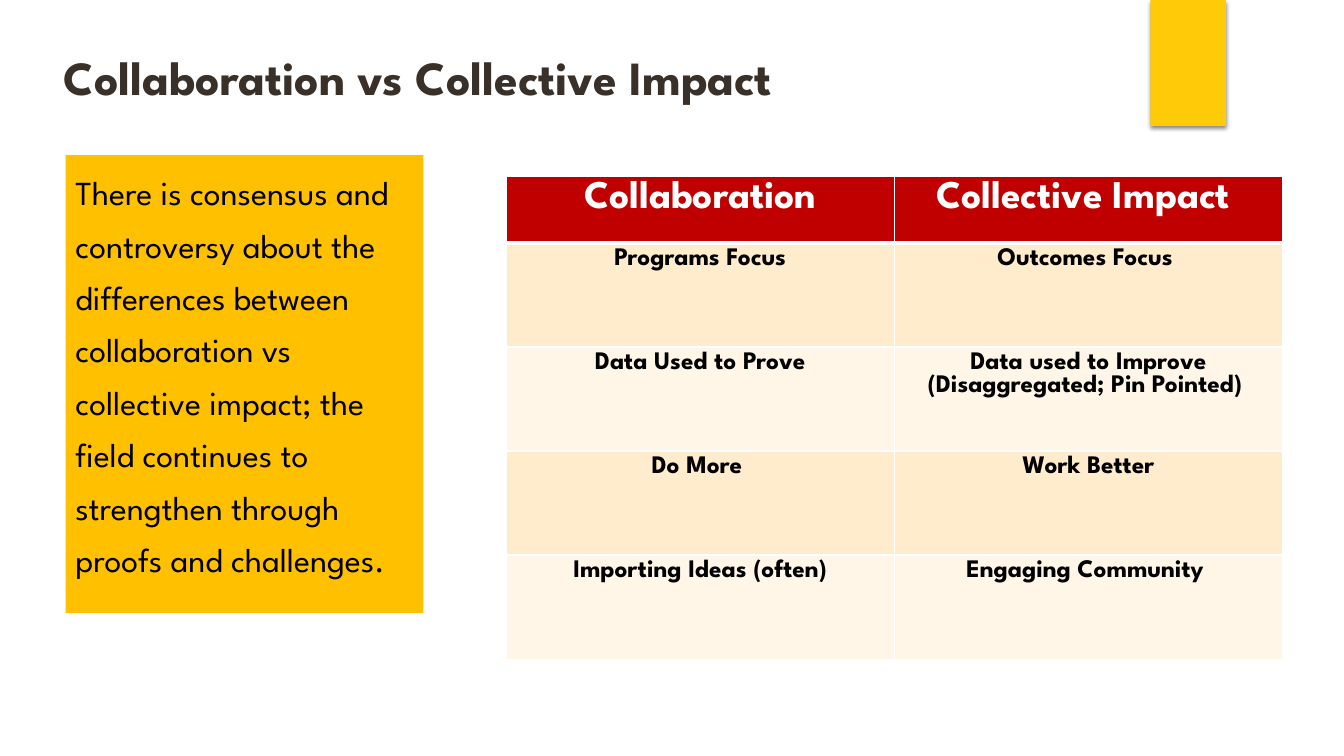
import pptx
import pptx.dml.color
import pptx.enum.shapes
import pptx.enum.text
import pptx.oxml
import pptx.oxml.ns
import pptx.util

FONT = "League Spartan"
WIDTH, HEIGHT = 13.33, 7.5
HEADINGS = ("Collaboration", "Collective Impact ")
CONTRASTS = [
    ("Programs Focus", "Outcomes Focus "),
    ("Data Used to Prove", "Data used to Improve (Disaggregated; Pin Pointed) "),
    ("Do More ", "Work Better"),
    ("Importing Ideas (often)", "Engaging Community "),
]
CONSENSUS = ("There is consensus and controversy about the differences between "
             "collaboration vs collective impact; the field continues to "
             "strengthen through proofs and challenges.")


def color(hex_string):
    return pptx.dml.color.RGBColor.from_string(hex_string)


def inches(box):
    return [pptx.util.Inches(length) for length in box]


def style(paragraph, size, hex_string, bold=False):
    font = paragraph.font
    font.name, font.size, font.bold = FONT, pptx.util.Pt(size), bold
    font.color.rgb = color(hex_string)


def add_block(slide, box, fill):
    block = slide.shapes.add_shape(
        pptx.enum.shapes.MSO_SHAPE.RECTANGLE, *inches(box))
    block.fill.solid()
    block.fill.fore_color.rgb = color(fill)
    block.line.fill.background()
    block.shadow.inherit = False
    return block


def add_tab(slide, box):
    tab = add_block(slide, box, "FFCA08")
    # Soft shadow straight below the tab
    effects = tab._element.spPr.find(pptx.oxml.ns.qn("a:effectLst"))
    effects.append(pptx.oxml.parse_xml(
        f'<a:outerShdw {pptx.oxml.ns.nsdecls("a")} blurRad="38100" dist="25400" '
        'dir="5400000" rotWithShape="0"><a:srgbClr val="000000">'
        '<a:alpha val="45000"/></a:srgbClr></a:outerShdw>'))


def add_title(slide, box):
    title = slide.shapes.title
    title.left, title.top, title.width, title.height = inches(box)
    frame = title.text_frame
    frame.text = "Collaboration vs Collective Impact"
    frame.vertical_anchor = pptx.enum.text.MSO_ANCHOR.MIDDLE
    heading = frame.paragraphs[0]
    heading.alignment = pptx.enum.text.PP_ALIGN.LEFT
    heading.line_spacing = 1.4
    style(heading, 34, "39302A", bold=True)


def add_consensus(slide, box):
    frame = add_block(slide, box, "FFC000").text_frame
    frame.word_wrap = True
    frame.vertical_anchor = pptx.enum.text.MSO_ANCHOR.TOP
    frame.text = CONSENSUS
    statement = frame.paragraphs[0]
    statement.alignment = pptx.enum.text.PP_ALIGN.LEFT
    statement.line_spacing = 1.3
    style(statement, 24, "000000")


def add_borders(cell, top, bottom):
    properties = cell._tc.get_or_add_tcPr()
    for side, points in (("L", 1), ("R", 1), ("T", top), ("B", bottom)):
        properties.append(pptx.oxml.parse_xml(
            f'<a:ln{side} {pptx.oxml.ns.nsdecls("a")} w="{pptx.util.Pt(points)}">'
            f'<a:solidFill><a:srgbClr val="FFFFFF"/></a:solidFill></a:ln{side}>'))


def add_comparison(slide, box, header_height):
    rows = [HEADINGS, *CONTRASTS]
    table = slide.shapes.add_table(len(rows), len(HEADINGS), *inches(box)).table
    row_height = (box[3] - header_height) / len(CONTRASTS)
    for r, texts in enumerate(rows):
        header = r == 0
        table.rows[r].height = pptx.util.Inches(header_height if header else row_height)
        fill = "C00000" if header else ("FFF6E7", "FFECCC")[r % 2]
        for c, text in enumerate(texts):
            cell = table.cell(r, c)
            # Heavier rule between the header and the first row
            add_borders(cell, top=3 if r == 1 else 1, bottom=3 if header else 1)
            cell.fill.solid()
            cell.fill.fore_color.rgb = color(fill)
            cell.text = text
            label = cell.text_frame.paragraphs[0]
            label.alignment = pptx.enum.text.PP_ALIGN.CENTER
            style(label, 28 if header else 18, "FFFFFF" if header else "000000", bold=True)


def main():
    deck = pptx.Presentation()
    deck.slide_width, deck.slide_height = inches((WIDTH, HEIGHT))
    slide = deck.slides.add_slide(deck.slide_layouts.get_by_name("Title Only"))
    add_tab(slide, (11.41, 0, 0.75, HEIGHT / 6))
    add_title(slide, (0.53, 0.23, 11.5, 0.84))
    add_comparison(slide, (5.02, 1.75, 7.7, 4.79), header_height=0.66)
    add_consensus(slide, (0.65, 1.54, 3.55, 4.54))
    deck.save("out.pptx")


if __name__ == "__main__":
    main()
